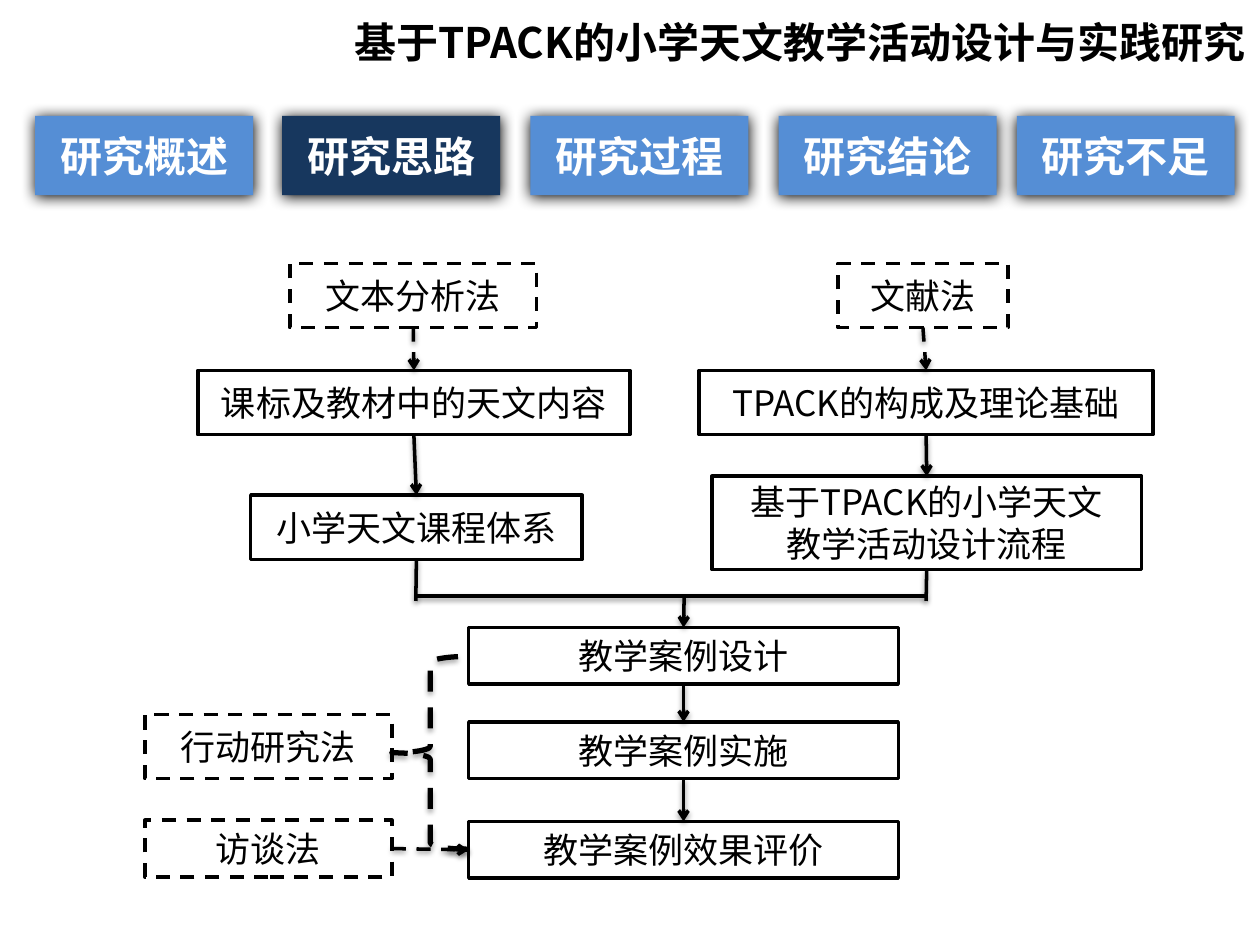
from lxml.etree import SubElement as Sub
from pptx import Presentation
from pptx.dml.color import RGBColor
from pptx.enum.dml import MSO_LINE as Dash
from pptx.enum.shapes import MSO_CONNECTOR as Link, MSO_SHAPE as Kind
from pptx.enum.text import MSO_ANCHOR as Anchor, PP_ALIGN as Align
from pptx.oxml.ns import qn
from pptx.util import Inches, Pt

BLACK = RGBColor(0, 0, 0)
WHITE = RGBColor(255, 255, 255)
BLUE = RGBColor(0x55, 0x8E, 0xD5)
NAVY = RGBColor(0x17, 0x37, 0x5E)
FONT = "Noto Sans CJK SC"
TOP, LEFT, BOTTOM, RIGHT = range(4)

prs = Presentation()
prs.slide_width, prs.slide_height = Inches(10), Inches(7.5)
shapes = prs.slides.add_slide(prs.slide_layouts[6]).shapes


def write(shape, text, size=20, bold=False, color=BLACK, align=Align.CENTER,
          anchor=Anchor.MIDDLE):
    frame = shape.text_frame
    frame.word_wrap = True
    frame.vertical_anchor = anchor
    frame.text = text
    for para in frame.paragraphs:
        para.alignment = align
        for run in para.runs:
            font = run.font
            font.name, font.size, font.bold = FONT, Pt(size), bold
            font.color.rgb = color
            Sub(font._element, qn("a:ea"), typeface=FONT)


def shade(shape, blur, dist, alpha):
    """Add a downward black shadow; call it after the line is set."""
    props = shape._element.spPr
    for old in props.findall(qn("a:effectLst")):
        props.remove(old)
    cast = Sub(Sub(props, qn("a:effectLst")), qn("a:outerShdw"),
               blurRad=str(Pt(blur)), dist=str(Pt(dist)), dir="5400000",
               rotWithShape="0")
    tint = Sub(cast, qn("a:srgbClr"), val=str(BLACK))
    Sub(tint, qn("a:alpha"), val=str(alpha * 1000))


# Title
title = shapes.add_textbox(Inches(2.48), Inches(0.08), Inches(7.5), Inches(0.51))
write(title, "基于TPACK的小学天文教学活动设计与实践研究", size=24, bold=True,
      align=Align.RIGHT, anchor=Anchor.TOP)

# Section tabs, the current one darker
for name, x in [("研究概述", 0.28), ("研究思路", 2.24), ("研究过程", 4.21),
                ("研究结论", 6.18), ("研究不足", 8.07)]:
    tab = shapes.add_shape(Kind.RECTANGLE, Inches(x), Inches(0.92),
                           Inches(1.73), Inches(0.63))
    tab.fill.solid()
    tab.fill.fore_color.rgb = NAVY if name == "研究思路" else BLUE
    tab.line.fill.background()
    shade(tab, 8.5, 1, 100)
    write(tab, name, size=24, bold=True, color=WHITE)

# Flow boxes: key, text, left, top, width, height, dashed
boxes = {}
for key, text, x, y, w, h, dashed in [
    ("text", "文本分析法", 2.3, 2.09, 1.96, 0.51, True),
    ("books", "文献法", 6.65, 2.09, 1.35, 0.51, True),
    ("topics", "课标及教材中的天文内容", 1.57, 2.94, 3.43, 0.51, False),
    ("theory", "TPACK的构成及理论基础", 5.55, 2.94, 3.6, 0.51, False),
    ("course", "小学天文课程体系", 1.99, 3.93, 2.63, 0.51, False),
    ("steps", "基于TPACK的小学天文\n教学活动设计流程", 5.65, 3.78, 3.41, 0.74, False),
    ("design", "教学案例设计", 3.72, 4.98, 3.41, 0.45, False),
    ("teach", "教学案例实施", 3.72, 5.73, 3.41, 0.45, False),
    ("result", "教学案例效果评价", 3.72, 6.52, 3.41, 0.45, False),
    ("action", "行动研究法", 1.15, 5.67, 1.96, 0.51, True),
    ("talk", "访谈法", 1.15, 6.51, 1.96, 0.45, True),
]:
    box = shapes.add_shape(Kind.RECTANGLE, Inches(x), Inches(y),
                           Inches(w), Inches(h))
    box.fill.background()
    box.line.color.rgb = BLACK
    box.line.width = Pt(2)
    if dashed:
        box.line.dash_style = Dash.DASH
    box.shadow.inherit = False
    write(box, text)
    boxes[key] = box

# Links: each end is a point or a box side; then dashed, arrow
for start, end, dashed, arrow in [
    (("text", BOTTOM), ("topics", TOP), True, True),
    (("books", BOTTOM), ("theory", TOP), True, True),
    (("topics", BOTTOM), ("course", TOP), False, True),
    (("theory", BOTTOM), ("steps", TOP), False, True),
    (("course", BOTTOM), (3.3, 4.77), False, False),
    (("steps", BOTTOM), (7.35, 4.77), False, False),
    ((3.3, 4.73), (7.35, 4.73), False, False),
    ((5.43, 4.73), ("design", TOP), False, True),
    (("design", BOTTOM), ("teach", TOP), False, True),
    (("teach", BOTTOM), ("result", TOP), False, True),
    (("talk", RIGHT), ("result", LEFT), True, True),
]:
    ends = [(0, 0) if p[0] in boxes else p for p in (start, end)]
    link = shapes.add_connector(Link.STRAIGHT,
                                *[Inches(v) for p in ends for v in p])
    if start[0] in boxes:
        link.begin_connect(boxes[start[0]], start[1])
    if end[0] in boxes:
        link.end_connect(boxes[end[0]], end[1])
    link.line.color.rgb = BLACK
    link.line.width = Pt(2)
    if dashed:
        link.line.dash_style = Dash.DASH
    if arrow:
        Sub(link.line._get_or_add_ln(), qn("a:tailEnd"), type="arrow")
    shade(link, 3.1, 1.6, 38)

# Brace from action research to the teaching cases
brace = shapes.add_shape(Kind.LEFT_BRACE, Inches(3.11), Inches(5.21),
                         Inches(0.61), Inches(1.53))
brace.fill.background()
brace.line.color.rgb = BLACK
brace.line.width = Pt(3)
brace.line.dash_style = Dash.DASH
shade(brace, 3.1, 1.8, 35)

prs.save("out.pptx")
